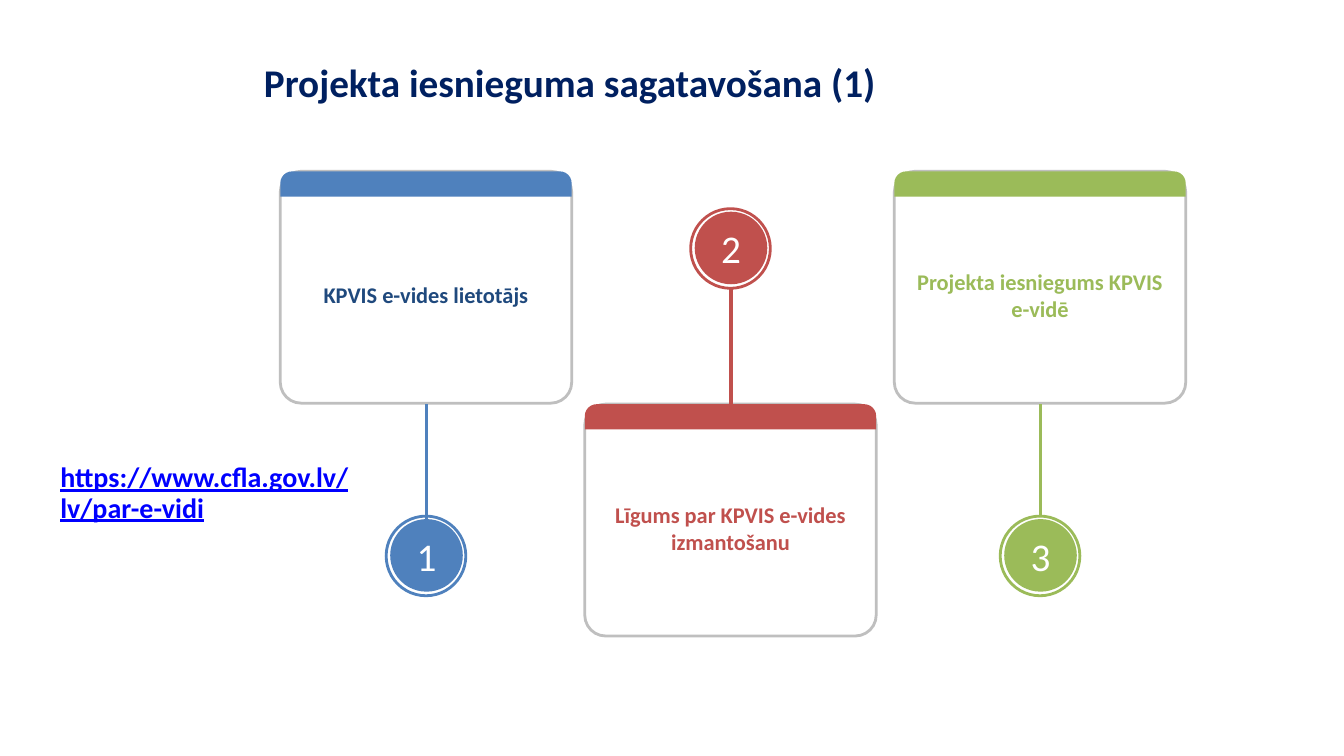
from lxml.etree import SubElement
from pptx import Presentation
from pptx.dml.color import RGBColor
from pptx.enum.shapes import MSO_CONNECTOR as Link, MSO_SHAPE as Shape
from pptx.enum.text import MSO_ANCHOR as Anchor, PP_ALIGN as Align
from pptx.oxml.ns import qn
from pptx.util import Pt

PX = 9144  # 100 px to the inch
FONT = "Calibri"
WHITE = RGBColor(0xFF, 0xFF, 0xFF)
GRAY = RGBColor(0xBF, 0xBF, 0xBF)
NAVY = RGBColor(0x00, 0x20, 0x60)
DARK = RGBColor(0x1F, 0x49, 0x7D)
BLUE = RGBColor(0x4F, 0x81, 0xBD)
RED = RGBColor(0xC0, 0x50, 0x4D)
GREEN = RGBColor(0x9B, 0xBB, 0x59)
URL = RGBColor(0x00, 0x00, 0xFF)

CARD_W, CARD_H, BAR_H = 289, 230, 25
STEM, RING, DISC = 115, 79, 72
HIGH, LOW = 170, 401


def emu(*px):
    return [v * PX for v in px]


def write(shape, text, size, color, bold=False, align=Align.CENTER,
          anchor=Anchor.MIDDLE, pad=(10, 5, 10, 5)):
    frame = shape.text_frame
    frame.word_wrap = True
    frame.vertical_anchor = anchor
    (frame.margin_left, frame.margin_top,
     frame.margin_right, frame.margin_bottom) = emu(*pad)
    frame.text = text
    para = frame.paragraphs[0]
    para.alignment = align
    font = para.runs[0].font
    font.name, font.size, font.bold = FONT, Pt(size), bold
    font.color.rgb = color
    return para


def add_form(slide, kind, box, fill=None, edge=None, adjust=()):
    form = slide.shapes.add_shape(kind, *emu(*box))
    form.shadow.inherit = False
    for i, value in enumerate(adjust):
        form.adjustments[i] = value
    if fill is None:
        form.fill.background()
    else:
        form.fill.solid()
        form.fill.fore_color.rgb = fill
    if edge is None:
        form.line.fill.background()
    else:
        form.line.color.rgb = edge
        form.line.width = Pt(2)
    return form


def add_stem(slide, x, top, end, color):
    stem = slide.shapes.add_connector(Link.STRAIGHT, *emu(x, top, x, end))
    stem.line.color.rgb = color
    stem.line.width = Pt(2.25)
    SubElement(stem._element.spPr, qn("a:effectLst"))


def add_label(slide, box, *args, **style):
    return write(slide.shapes.add_textbox(*emu(*box)), *args, **style)


def add_step(slide, num, left, text, color, ink, low=False, back=WHITE):
    top = LOW if low else HIGH
    mid = left + CARD_W // 2 + 1

    # Card with its coloured bar
    card = add_form(slide, Shape.ROUNDED_RECTANGLE,
                    (left, top, CARD_W, CARD_H), WHITE, GRAY, [0.09])
    write(card, text, 16, ink, bold=True, pad=(10, 20, 10, 5))
    add_form(slide, Shape.ROUND_2_SAME_RECTANGLE,
             (left, top, CARD_W, BAR_H), color, adjust=[0.47, 0])

    # Stem and numbered badge
    start = top - STEM if low else LOW
    add_stem(slide, mid, start, start + STEM, color)
    ring = start - RING if low else start + STEM - 4
    add_form(slide, Shape.OVAL, (mid - RING // 2 - 1, ring, RING, RING),
             back, color)
    disc = add_form(slide, Shape.OVAL,
                    (mid - DISC // 2, ring + 3, DISC, DISC), color)
    write(disc, str(num), 28, WHITE)


def main():
    deck = Presentation()
    deck.slide_width, deck.slide_height = emu(1333, 750)
    slide = deck.slides.add_slide(deck.slide_layouts[6])

    # Steps
    add_step(slide, 1, 278, "KPVIS e-vides lietotājs", BLUE, DARK, back=None)
    add_step(slide, 2, 580, "Līgums par KPVIS e-vides izmantošanu",
             RED, RED, low=True)
    add_step(slide, 3, 887, "Projekta iesniegums KPVIS e-vidē", GREEN, GREEN)

    # Web address
    link = add_label(slide, (50, 455, 337, 136),
                     "https://www.cfla.gov.lv/lv/par-e-vidi", 20, URL,
                     bold=True, align=Align.JUSTIFY, anchor=Anchor.TOP)
    link.line_spacing = 0.9
    link.runs[0].font.underline = True

    # Title
    add_label(slide, (252, 53, 983, 117),
              "Projekta iesnieguma sagatavošana (1)", 28, NAVY,
              bold=True, align=Align.LEFT, anchor=Anchor.TOP)

    deck.save("out.pptx")


if __name__ == "__main__":
    main()
